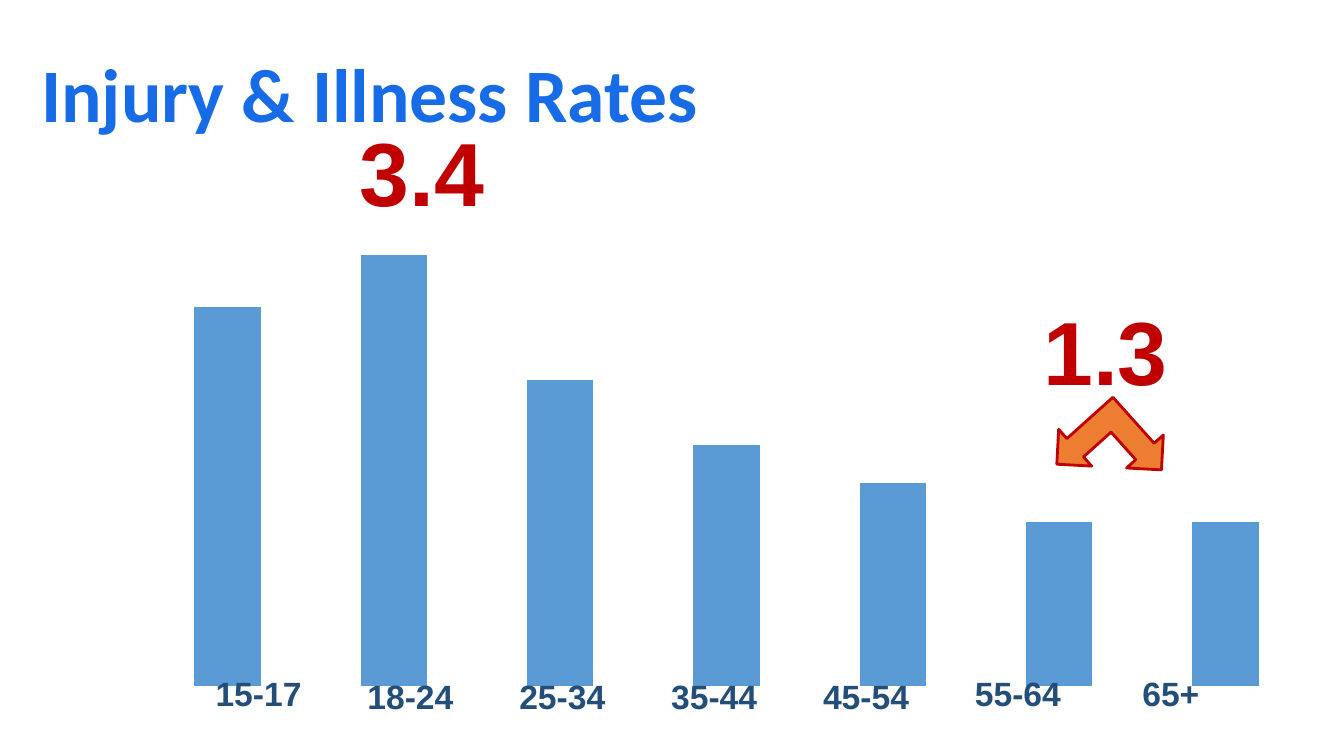
from pptx import Presentation
from pptx.chart.data import CategoryChartData
from pptx.dml.color import RGBColor
from pptx.enum.chart import XL_CHART_TYPE as ChartType
from pptx.enum.shapes import MSO_SHAPE as Shape
from pptx.enum.text import MSO_ANCHOR as Anchor, MSO_AUTO_SIZE as AutoSize, PP_ALIGN as Align
from pptx.util import Inches, Pt

COLORS = {
    "title": "176BE7",
    "bar": "5B9BD5",
    "age": "234E79",
    "rate": "C00000",
    "arrow": "ED7D31",
    "chart_text": "000000",
}
AGES = ["15-17", "18-24", "25-34", "35-44", "45-54", "55-64", "65+"]
RELATIVE_RATES = [88, 100, 71, 56, 47, 38, 38]


def color(name):
    return RGBColor.from_string(COLORS[name])


class RateSlide:
    """Places elements by (left, top, width, height) in percent of the slide."""

    def __init__(self, deck):
        self.deck = deck
        self.slide = deck.slides.add_slide(deck.slide_layouts[5])
        self.shapes = self.slide.shapes

    def box(self, left, top, width, height):
        across, down = self.deck.slide_width / 100, self.deck.slide_height / 100
        return (int(left * across), int(top * down),
                int(width * across), int(height * down))

    def set_text(self, frame, text, size, font, tint, align):
        paragraph = frame.paragraphs[0]
        paragraph.text = text
        paragraph.alignment = align
        paragraph.font.name = font
        paragraph.font.size = Pt(size)
        paragraph.font.bold = True
        paragraph.font.color.rgb = color(tint)
        return paragraph

    def title(self, text, *area):
        heading = self.shapes.title
        heading.left, heading.top, heading.width, heading.height = self.box(*area)
        frame = heading.text_frame
        frame.vertical_anchor = Anchor.MIDDLE
        frame.auto_size = AutoSize.NONE
        frame.margin_left = frame.margin_right = Inches(0.07)
        frame.margin_top = frame.margin_bottom = Inches(0.07)
        self.set_text(frame, text, 54, "Calibri", "title", Align.LEFT).line_spacing = 0.9

    def label(self, text, size, tint, align, *area):
        frame = self.shapes.add_textbox(*self.box(*area)).text_frame
        frame.word_wrap = False
        frame.auto_size = AutoSize.SHAPE_TO_FIT_TEXT
        self.set_text(frame, text, size, "Arial", tint, align)

    def columns(self, values, *area):
        rates = CategoryChartData()
        rates.categories = [str(n) for n in range(1, len(values) + 1)]
        rates.add_series("Series 1", values)
        chart = self.shapes.add_chart(
            ChartType.COLUMN_CLUSTERED, *self.box(*area), rates).chart
        chart.has_title = chart.has_legend = False
        chart.font.name, chart.font.size = "Arial", Pt(10)
        chart.font.color.rgb = color("chart_text")
        chart.value_axis.minimum_scale = 0
        chart.value_axis.maximum_scale = 117.65
        chart.value_axis.has_major_gridlines = False
        chart.value_axis.visible = chart.category_axis.visible = False
        plot = chart.plots[0]
        plot.gap_width = 150
        plot.vary_by_categories = False
        fill = plot.series[0].format.fill
        fill.solid()
        fill.fore_color.rgb = color("bar")

    def double_arrow(self, rotation, *area):
        arrow = self.shapes.add_shape(Shape.LEFT_UP_ARROW, *self.box(*area))
        arrow.shadow.inherit = False
        arrow.rotation = rotation
        arrow.fill.solid()
        arrow.fill.fore_color.rgb = color("arrow")
        arrow.line.color.rgb = color("rate")
        arrow.line.width = Pt(2)


def main():
    deck = Presentation()
    deck.slide_width, deck.slide_height = Inches(13.33), Inches(7.5)
    page = RateSlide(deck)
    page.title("Injury & Illness Rates", 2.55, 3.33, 86.27, 19.33)
    page.columns(RELATIVE_RATES, 8.93, 22.27, 90.25, 69.87)
    for column, age in enumerate(AGES):
        top = 88.8 if 1 <= column <= 4 else 88.4
        align = Align.CENTER if age == "65+" else Align.LEFT
        page.label(age, 24, "age", align, 15.3 + 11.3 * column, top, 8.03, 6.67)
    for rate, left, top in [("3.4", 23.56, 14.8), ("1.3", 74.42, 38.53)]:
        page.label(rate, 64, "rate", Align.CENTER, left, top, 15.68, 15.73)
    page.double_arrow(228.1, 78.92, 52.93, 7.35, 13.07)
    deck.save("out.pptx")


if __name__ == "__main__":
    main()
